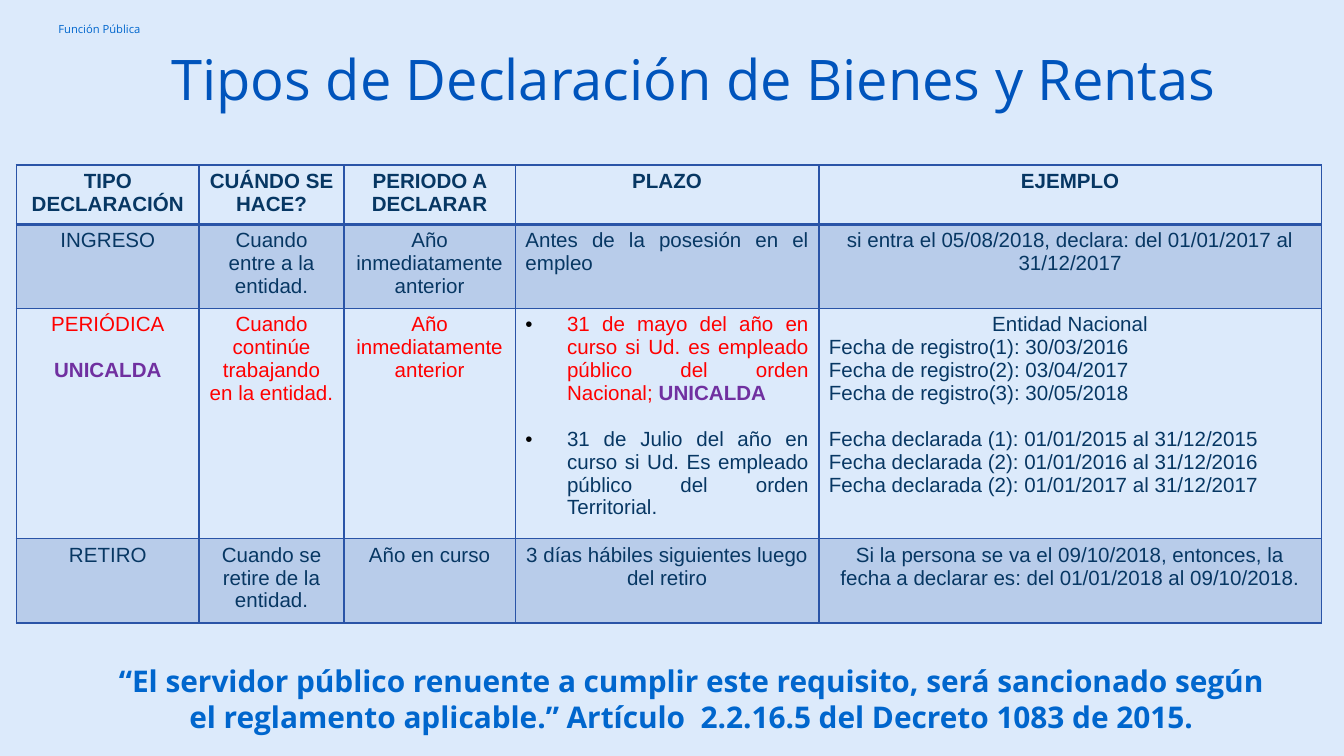
from dataclasses import dataclass

from lxml.etree import SubElement
from pptx import Presentation
from pptx.dml.color import RGBColor
from pptx.enum.text import MSO_ANCHOR as Anchor, MSO_AUTO_SIZE as AutoSize, PP_ALIGN as Align
from pptx.oxml.ns import qn
from pptx.util import Inches, Pt


@dataclass(frozen=True)
class Theme:
    background: str = "DCEAFB"
    heading: str = "0054BC"
    accent: str = "0066CD"
    ink: str = "073763"
    rule: str = "2A54A7"
    alert: str = "FF0000"
    entity: str = "7030A0"
    bullet: str = "000000"
    display_font: str = "Open Sans"
    table_font: str = "Arial"
    title_size: float = 30
    quote_size: float = 16
    table_size: float = 11
    label_size: float = 6
    blank_line: float = 12.3


THEME = Theme()


@dataclass(frozen=True)
class Para:
    text: str
    align: Align = Align.CENTER
    color: str = THEME.ink
    bold: bool = False
    gap: float = 0
    bullet: bool = False
    entity: str = ""  # closing words in the entity's colour


class Deck:
    """Holds the theme and the current slide; lengths are percentages of the slide."""

    def __init__(self, theme, width, height):
        self.theme = theme
        self.file = Presentation()
        self.file.slide_width, self.file.slide_height = width, height
        self.slide = self.file.slides.add_slide(self.file.slide_layouts[5])
        fill = self.slide.background.fill
        fill.solid()
        fill.fore_color.rgb = RGBColor.from_string(theme.background)

    def x(self, share):
        return int(self.file.slide_width * share / 100)

    def y(self, share):
        return int(self.file.slide_height * share / 100)

    def box(self, left, top, width, height):
        return self.x(left), self.y(top), self.x(width), self.y(height)

    def style(self, font, size, color, bold=False, name=None):
        font.name = name or self.theme.display_font
        font.size, font.bold = Pt(size), bold
        font.color.rgb = RGBColor.from_string(color)

    def tighten(self, holder):
        holder.margin_left = holder.margin_right = Pt(5.4)
        holder.margin_top = holder.margin_bottom = Pt(2.7)

    def title(self, text, box):
        heading = self.slide.shapes.title
        heading.left, heading.top, heading.width, heading.height = self.box(*box)
        frame = heading.text_frame
        frame.auto_size, frame.vertical_anchor = AutoSize.NONE, Anchor.MIDDLE
        self.tighten(frame)
        frame.text = text
        line = frame.paragraphs[0]
        line.alignment, line.line_spacing = Align.CENTER, 0.9
        self.style(line.font, self.theme.title_size, self.theme.heading)

    def text(self, text, box, size, align, bold=False, tight=False):
        frame = self.slide.shapes.add_textbox(*self.box(*box)).text_frame
        frame.word_wrap = True
        if tight:
            self.tighten(frame)
            frame.vertical_anchor = Anchor.MIDDLE
        frame.text = text
        frame.paragraphs[0].alignment = align
        self.style(frame.paragraphs[0].font, size, self.theme.accent, bold)

    def table(self, rows, box, columns, heights):
        holder = self.slide.shapes.add_table(len(rows), len(columns), *self.box(*box))
        grid = holder.table
        grid.first_row = grid.horz_banding = False
        for column, share in zip(grid.columns, columns):
            column.width = self.x(share)
        for row, share in zip(grid.rows, heights):
            row.height = self.y(share)
        holder.height = self.y(box[3])
        for r, row in enumerate(rows):
            for c, paras in enumerate(row):
                cell = grid.cell(r, c)
                self.tighten(cell)
                self.shade(cell, r % 2 == 1)
                self.borders(cell, top=2 if r == 1 else 1, bottom=2 if r == 0 else 1)
                frame = cell.text_frame
                for i, para in enumerate(paras):
                    self.cell_line(frame.add_paragraph() if i else frame.paragraphs[0], para)

    def shade(self, cell, tinted):
        if not tinted:
            cell.fill.background()
            return
        cell.fill.solid()
        cell.fill.fore_color.rgb = RGBColor.from_string(self.theme.rule)
        color = cell._tc.tcPr.find(qn("a:solidFill"))[0]
        SubElement(color, qn("a:alpha"), val="20000")

    def borders(self, cell, top, bottom):
        props = cell._tc.get_or_add_tcPr()
        for i, (side, width) in enumerate(zip("LRTB", (1, 1, top, bottom))):
            line = SubElement(props, qn(f"a:ln{side}"), w=str(int(Pt(width))))
            fill = SubElement(line, qn("a:solidFill"))
            SubElement(fill, qn("a:srgbClr"), val=self.theme.rule)
            props.insert(i, line)

    def cell_line(self, line, para):
        theme = self.theme
        line.alignment = para.align
        if para.gap:
            line.space_before = Pt(para.gap)
        if para.bullet:
            self.add_bullet(line)
        body = line.add_run()
        body.text = para.text
        body_font = body.font if para.entity else line.font
        self.style(body_font, theme.table_size, para.color, para.bold, theme.table_font)
        if para.entity:
            closing = line.add_run()
            closing.text = para.entity
            self.style(closing.font, theme.table_size, theme.entity, True, theme.table_font)

    def add_bullet(self, line):
        props = line._p.get_or_add_pPr()
        props.set("marL", str(int(Inches(0.31))))
        props.set("indent", str(int(Inches(-0.31))))
        color = SubElement(props, qn("a:buClr"))
        SubElement(color, qn("a:srgbClr"), val=self.theme.bullet)
        SubElement(props, qn("a:buFont"), typeface=self.theme.table_font)
        SubElement(props, qn("a:buChar"), char="•")

    def save(self):
        self.file.save("out.pptx")


ENTITY = "UNICALDA"
HEADERS = ["TIPO DECLARACIÓN", "CUÁNDO SE HACE?", "PERIODO A DECLARAR", "PLAZO", "EJEMPLO"]
ENTRY = ["INGRESO", "Cuando entre a la entidad.", "Año inmediatamente anterior",
         "Antes de la posesión en el empleo",
         "si entra el 05/08/2018, declara: del 01/01/2017 al 31/12/2017"]
EXIT = ["RETIRO", "Cuando se retire de la entidad.", "Año en curso",
        "3 días hábiles siguientes luego del retiro",
        "Si la persona se va el 09/10/2018, entonces, la fecha a declarar es: "
        "del 01/01/2018 al 09/10/2018."]
REGISTERED = ["(1): 30/03/2016", "(2): 03/04/2017", "(3): 30/05/2018"]
DECLARED = [("1", 2015), ("2", 2016), ("2", 2017)]


def periodic_row():
    gap = THEME.blank_line
    examples = [Para("Entidad Nacional")]
    examples += [Para(f"Fecha de registro{entry}", Align.LEFT) for entry in REGISTERED]
    examples += [Para(f"Fecha declarada ({number}): 01/01/{year} al 31/12/{year}", Align.LEFT,
                      gap=0 if i else gap)
                 for i, (number, year) in enumerate(DECLARED)]
    return [
        [Para("PERIÓDICA", color=THEME.alert),
         Para(ENTITY, color=THEME.entity, bold=True, gap=gap)],
        [Para("Cuando continúe trabajando en la entidad.", color=THEME.alert)],
        [Para("Año inmediatamente anterior", color=THEME.alert)],
        [Para("31 de mayo del año en curso si Ud. es empleado público del orden Nacional; ",
              Align.JUSTIFY, THEME.alert, bullet=True, entity=ENTITY),
         Para("31 de Julio del año en curso si Ud. Es empleado público del orden Territorial.",
              Align.JUSTIFY, gap=gap, bullet=True)],
        examples,
    ]


def main():
    deck = Deck(THEME, Inches(10), Pt(405))
    deck.text("Función Pública", (3.6, 2.1, 20.3, 3.6), THEME.label_size, Align.LEFT, tight=True)
    deck.title("Tipos de Declaración de Bienes y Rentas", (5.5, 7.1, 92.3, 7.7))
    deck.text("“El servidor público renuente a cumplir este requisito, será sancionado según "
              "el reglamento aplicable.” Artículo  2.2.16.5 del Decreto 1083 de 2015.",
              (7.7, 86.8, 87.5, 10.5), THEME.quote_size, Align.CENTER, bold=True)
    rows = [
        [[Para(header, bold=True)] for header in HEADERS],
        [[Para(text, Align.JUSTIFY if c == 3 else Align.CENTER)] for c, text in enumerate(ENTRY)],
        periodic_row(),
        [[Para(text)] for text in EXIT],
    ]
    deck.table(rows, (1.23, 21.8, 97.1, 60.8), columns=(13.6, 10.76, 12.76, 22.58, 37.4),
               heights=(7.5, 10.6, 26.3, 10.6))
    deck.save()


if __name__ == "__main__":
    main()
